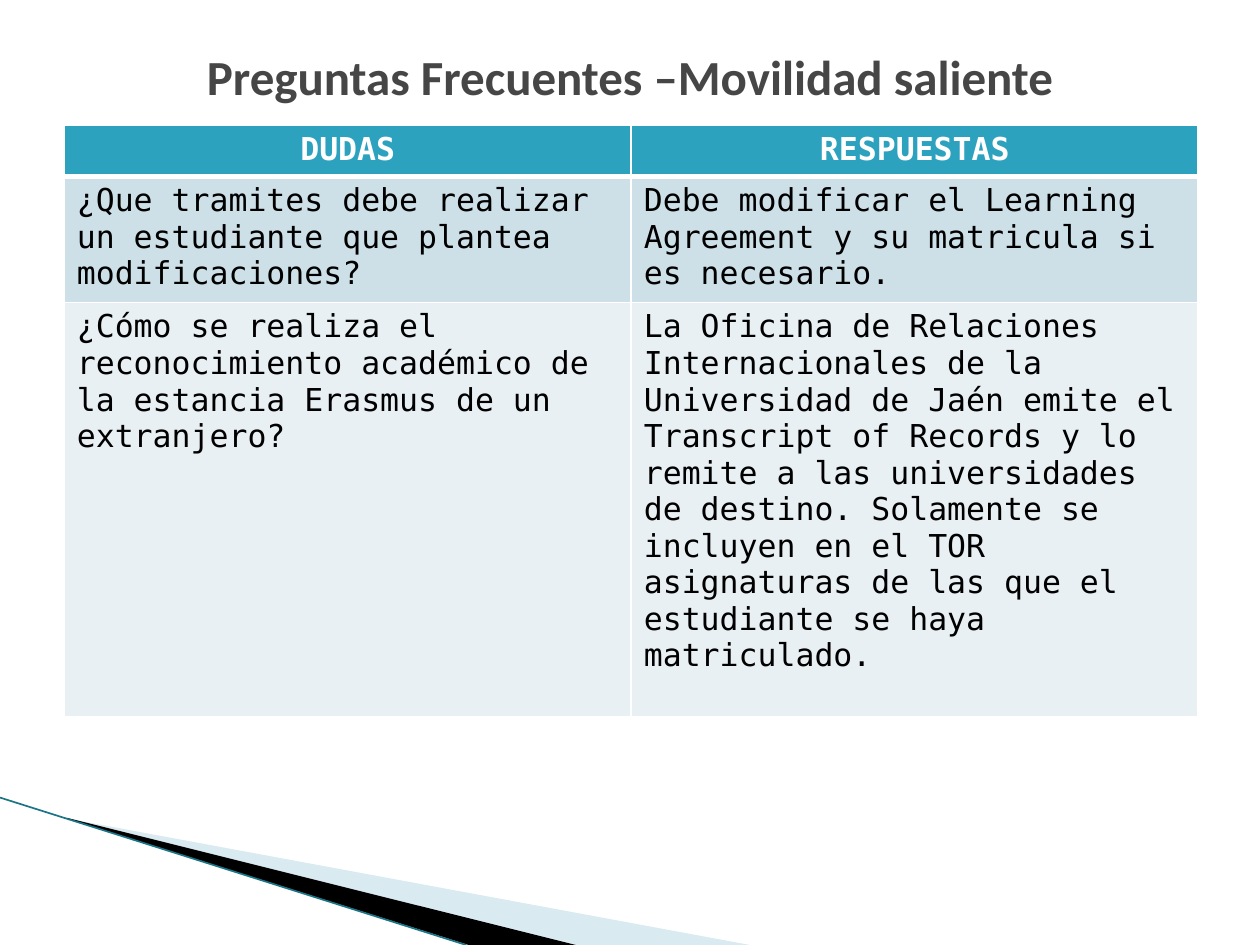
from dataclasses import dataclass

from lxml import etree
from pptx import Presentation
from pptx.dml.color import RGBColor
from pptx.enum.shapes import MSO_CONNECTOR
from pptx.enum.text import MSO_ANCHOR, PP_ALIGN
from pptx.oxml.ns import qn
from pptx.util import Inches, Pt

STRAIGHT = MSO_CONNECTOR.STRAIGHT
MIDDLE, TOP = MSO_ANCHOR.MIDDLE, MSO_ANCHOR.TOP
CENTER, LEFT = PP_ALIGN.CENTER, PP_ALIGN.LEFT


@dataclass(frozen=True)
class Theme:
    title: str = "464646"
    text: str = "000000"
    white: str = "FFFFFF"
    header: str = "2DA2BF"
    bands: tuple = ("CDE0E8", "E8F0F4")
    pale_wedge: str = "A0CBDC"
    dark_wedge: str = "000000"
    edge: str = "1B7587"
    title_font: str = "Calibri"
    table_font: str = "DejaVu Sans Mono"
    title_size: int = 28
    table_size: int = 18


THEME = Theme()

FAQ = [
    ("DUDAS", "RESPUESTAS"),
    ("¿Que tramites debe realizar un estudiante que plantea modificaciones?",
     "Debe modificar el Learning Agreement y su matricula si es necesario."),
    ("¿Cómo se realiza el reconocimiento académico de la estancia Erasmus de un extranjero?",
     "La Oficina de Relaciones Internacionales de la Universidad de Jaén emite el "
     "Transcript of Records y lo remite a las universidades de destino. Solamente se "
     "incluyen en el TOR asignaturas de las que el estudiante se haya matriculado."),
]
ROW_HEIGHTS = (0.41, 0.96, 3.29)


def write(frame, text, *, font, size, color, bold=False, align=LEFT, anchor=TOP):
    frame.word_wrap = True
    frame.vertical_anchor = anchor
    paragraph = frame.paragraphs[0]
    paragraph.alignment = align
    run = paragraph.add_run()
    run.text = text
    run.font.name = font
    run.font.size = Pt(size)
    run.font.bold = bold
    run.font.color.rgb = RGBColor.from_string(color)


def add_wedge(slide, left, top, points, color, opacity=100):
    corners = [(Inches(left + x), Inches(top + y)) for x, y in points]
    builder = slide.shapes.build_freeform(*corners[0])
    builder.add_line_segments(corners[1:], close=True)
    wedge = builder.convert_to_shape()
    wedge.shadow.inherit = False
    wedge.line.fill.background()
    wedge.fill.solid()
    wedge.fill.fore_color.rgb = RGBColor.from_string(color)
    if opacity < 100:
        tint = wedge.fill._xPr.find(".//" + qn("a:srgbClr"))
        etree.SubElement(tint, qn("a:alpha"), val=str(opacity * 1000))


def add_corner_decoration(slide, left, top, width, height):
    add_wedge(slide, left, top,
              [(0.55, 0.17), (width, height), (4.56, height), (0.55, 0.18)],
              THEME.pale_wedge, opacity=40)
    add_wedge(slide, left, top,
              [(0.53, 0.16), (4.57, height), (3.72, height), (0.54, 0.17)],
              THEME.dark_wedge)
    edge = slide.shapes.add_connector(STRAIGHT, Inches(left), Inches(top),
                                      Inches(left + 3.7), Inches(top + height))
    edge.line.color.rgb = RGBColor.from_string(THEME.edge)
    edge.line.width = Pt(0.95)
    etree.SubElement(edge._element.spPr, qn("a:effectLst"))


def add_title(slide, left, top, width, height):
    title = slide.shapes.add_textbox(Inches(left), Inches(top), Inches(width), Inches(height))
    write(title.text_frame, "Preguntas Frecuentes –Movilidad saliente",
          font=THEME.title_font, size=THEME.title_size, color=THEME.title,
          bold=True, align=CENTER, anchor=MIDDLE)


def set_borders(cell, **widths):
    properties = cell._tc.get_or_add_tcPr()
    for index, (side, width) in enumerate(widths.items()):
        border = etree.Element(qn(f"a:ln{side}"), w=str(Pt(width)))
        fill = etree.SubElement(border, qn("a:solidFill"))
        etree.SubElement(fill, qn("a:srgbClr"), val=THEME.white)
        properties.insert(index, border)


def add_faq_table(slide, left, top, width, height):
    rows, columns = len(FAQ), len(FAQ[0])
    table = slide.shapes.add_table(rows, columns, Inches(left), Inches(top),
                                   Inches(width), Inches(height)).table
    for column in table.columns:
        column.width = Inches(width / columns)
    for r, (entry, row_height) in enumerate(zip(FAQ, ROW_HEIGHTS)):
        table.rows[r].height = Inches(row_height)
        is_header = r == 0
        for c, text in enumerate(entry):
            cell = table.cell(r, c)
            cell.fill.solid()
            cell.fill.fore_color.rgb = RGBColor.from_string(
                THEME.header if is_header else THEME.bands[r - 1])
            set_borders(cell, L=1, R=1, T=3 if r == 1 else 1, B=3 if is_header else 1)
            write(cell.text_frame, text, font=THEME.table_font, size=THEME.table_size,
                  color=THEME.white if is_header else THEME.text,
                  bold=is_header, align=CENTER if is_header else LEFT)


def main():
    deck = Presentation()
    deck.slide_width, deck.slide_height = Inches(10), Inches(7.5)
    slide = deck.slides.add_slide(deck.slide_layouts[6])
    add_corner_decoration(slide, 0, 6.33, 5.95, 1.17)
    add_title(slide, 0.5, 0.3, 9, 0.61)
    add_faq_table(slide, 0.51, 0.99, 9, sum(ROW_HEIGHTS))
    deck.save("out.pptx")


if __name__ == "__main__":
    main()
